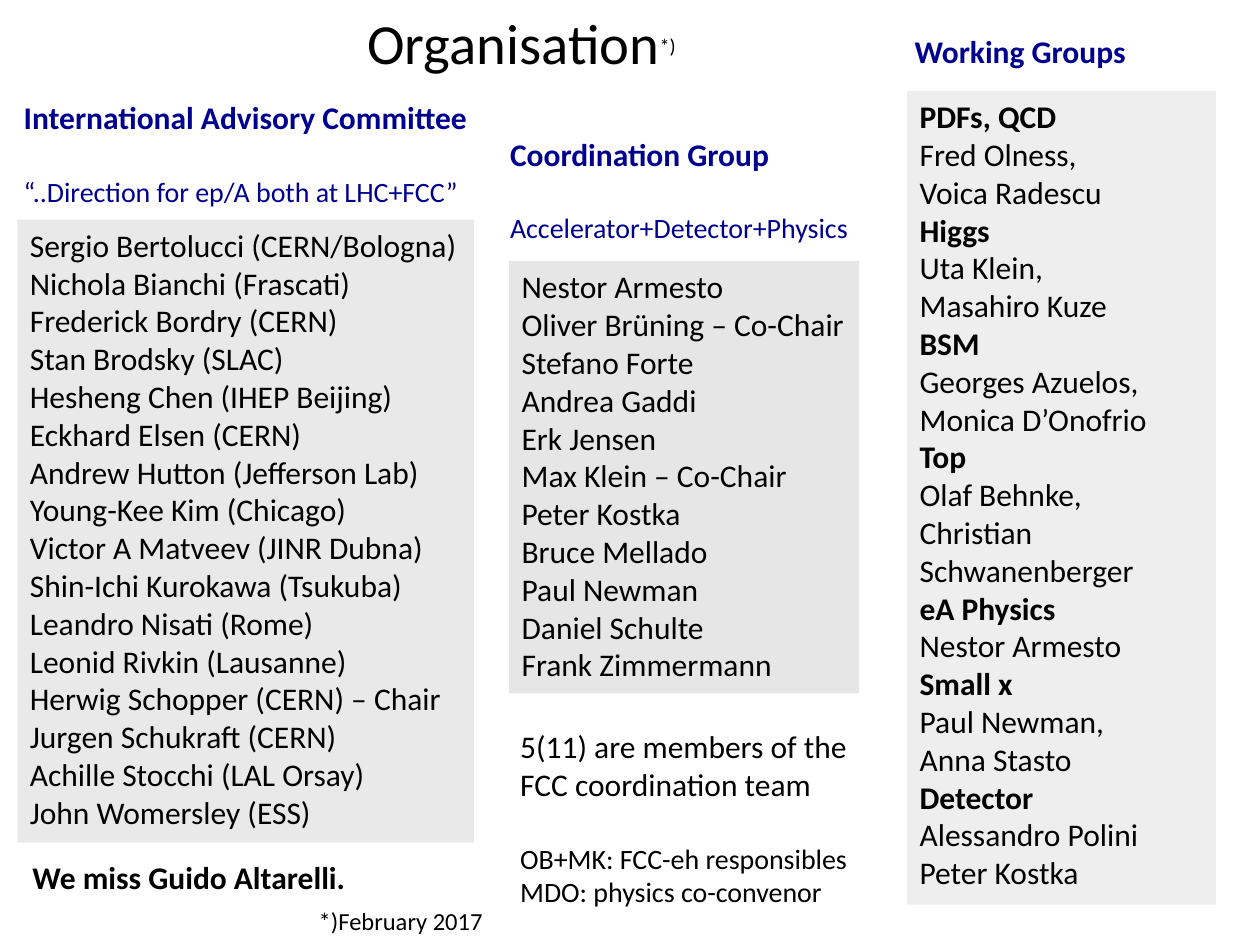
from lxml import etree
from pptx import Presentation
from pptx.dml.color import RGBColor
from pptx.enum.shapes import MSO_SHAPE
from pptx.enum.text import MSO_ANCHOR, MSO_AUTO_SIZE, PP_ALIGN
from pptx.oxml.ns import qn
from pptx.util import Pt

RECTANGLE = MSO_SHAPE.RECTANGLE
TOP, MIDDLE = MSO_ANCHOR.TOP, MSO_ANCHOR.MIDDLE
LEFT, CENTER = PP_ALIGN.LEFT, PP_ALIGN.CENTER
GROW = MSO_AUTO_SIZE.SHAPE_TO_FIT_TEXT

FONT = "Calibri"
BODY, SMALL, NOTE = 18, 16, 14
GAP = 22
COLORS = {
    "text": "000000",
    "heading": "000090",
    "committee": "D9D9D9",
    "coordination": "BFBFBF",
    "groups": "A6A6A6",
}

COMMITTEE = [
    "Sergio Bertolucci (CERN/Bologna)",
    "Nichola Bianchi (Frascati)",
    "Frederick Bordry (CERN)",
    "Stan Brodsky (SLAC)",
    "Hesheng Chen (IHEP Beijing)",
    "Eckhard Elsen (CERN)",
    "Andrew Hutton (Jefferson Lab)",
    "Young-Kee Kim (Chicago)",
    "Victor A Matveev (JINR Dubna)",
    "Shin-Ichi Kurokawa (Tsukuba)",
    "Leandro Nisati (Rome)",
    "Leonid Rivkin (Lausanne)",
    "Herwig Schopper (CERN) – Chair",
    "Jurgen Schukraft (CERN)",
    "Achille Stocchi (LAL Orsay)",
    "John Womersley (ESS)",
]
COORDINATION = [
    "Nestor Armesto",
    "Oliver Brüning – Co-Chair",
    "Stefano Forte",
    "Andrea Gaddi",
    "Erk Jensen",
    "Max Klein – Co-Chair",
    "Peter Kostka",
    "Bruce Mellado",
    "Paul Newman",
    "Daniel Schulte",
    "Frank Zimmermann",
]
WORKING_GROUPS = {
    "PDFs, QCD": ["Fred Olness,", "Voica Radescu"],
    "Higgs": ["Uta Klein,", "Masahiro Kuze"],
    "BSM": ["Georges Azuelos,", "Monica D’Onofrio"],
    "Top": ["Olaf Behnke,", "Christian Schwanenberger"],
    "eA Physics": ["Nestor Armesto"],
    "Small x": ["Paul Newman,", "Anna Stasto"],
    "Detector": ["Alessandro Polini", "Peter Kostka"],
}


def add_span(para, text, size=BODY, color="text", bold=False):
    """Append one formatted run to a paragraph and return it."""
    span = para.add_run()
    span.text = text
    span.font.name = FONT
    span.font.size = Pt(size)
    span.font.bold = bold
    span.font.color.rgb = RGBColor.from_string(COLORS[color])
    return span


def add_lines(frame, lines):
    """Fill a text frame from (text, style) pairs, one paragraph each."""
    for index, (text, style) in enumerate(lines):
        para = frame.add_paragraph() if index else frame.paragraphs[0]
        para.alignment = LEFT
        style = dict(style)
        para.space_before = Pt(style.pop("before", 0))
        add_span(para, text, **style)


def add_text(slide, bounds, lines):
    """Add an unwrapped text box that grows with its lines."""
    box = slide.shapes.add_textbox(*map(Pt, bounds))
    box.text_frame.word_wrap = False
    box.text_frame.auto_size = GROW
    add_lines(box.text_frame, lines)


def add_heading(slide, bounds, title, subtitle=None):
    """Add a bold column heading with an optional smaller subtitle."""
    lines = [(title, {"color": "heading", "bold": True})]
    if subtitle:
        lines.append((subtitle, {"color": "heading", "size": SMALL, "before": GAP}))
    add_text(slide, bounds, lines)


def add_panel(slide, bounds, color, opacity, lines):
    """Add a translucent rectangle that lists names."""
    panel = slide.shapes.add_shape(RECTANGLE, *map(Pt, bounds))
    panel.shadow.inherit = False
    panel.line.fill.background()
    panel.fill.solid()
    panel.fill.fore_color.rgb = RGBColor.from_string(COLORS[color])
    tint = panel.fill._xPr.find(".//" + qn("a:srgbClr"))
    etree.SubElement(tint, qn("a:alpha"), val=str(opacity * 1000))
    frame = panel.text_frame
    frame.word_wrap = True
    frame.auto_size = GROW
    frame.vertical_anchor = TOP
    add_lines(frame, lines)


def add_title(slide, bounds, title, mark):
    """Add the centred slide title with a raised footnote mark."""
    box = slide.shapes.add_textbox(*map(Pt, bounds))
    frame = box.text_frame
    frame.word_wrap = True
    frame.vertical_anchor = MIDDLE
    para = frame.paragraphs[0]
    para.alignment = CENTER
    add_span(para, title, 32.4)
    span = add_span(para, mark, 19.8)
    span.font._element.set("baseline", "30000")


def plain(names):
    """Pair each name with the default style."""
    return [(name, {}) for name in names]


def group_lines():
    """List each working group in bold, followed by its members."""
    lines = []
    for group, members in WORKING_GROUPS.items():
        lines += [(group, {"bold": True})] + plain(members)
    return lines


def main():
    """Build the organisation slide and save it."""
    deck = Presentation()
    deck.slide_width, deck.slide_height = Pt(720), Pt(540)
    slide = deck.slides.add_slide(deck.slide_layouts[6])

    add_title(slide, (54, 3.6, 488, 40.4), "Organisation", "*)")

    add_panel(slide, (10, 125.5, 261, 356), "committee", 57, plain(COMMITTEE))
    add_heading(slide, (6.5, 52.6, 271.4, 70.6), "International Advisory Committee",
                "“..Direction for ep/A both at LHC+FCC”")
    add_text(slide, (11.5, 486.5, 196, 29),
             [("We miss Guido Altarelli.", {"bold": True})])
    add_text(slide, (175, 514, 109.4, 24.5), [("*)February 2017", {"size": NOTE})])

    add_panel(slide, (291, 149.3, 200, 247), "coordination", 38, plain(COORDINATION))
    add_heading(slide, (284.4, 73.4, 211.7, 70.6), "Coordination Group",
                "Accelerator+Detector+Physics")
    add_text(slide, (290.2, 412, 203.8, 111.6), [
        ("5(11) are members of the", {}),
        ("FCC coordination team", {}),
        ("OB+MK: FCC-eh responsibles", {"size": SMALL, "before": GAP}),
        ("MDO: physics co-convenor", {"size": SMALL}),
    ])

    add_panel(slide, (518.4, 52, 176.4, 465), "groups", 18, group_lines())
    add_heading(slide, (515.5, 14.5, 137.5, 29), "Working Groups")

    deck.save("out.pptx")


if __name__ == "__main__":
    main()
